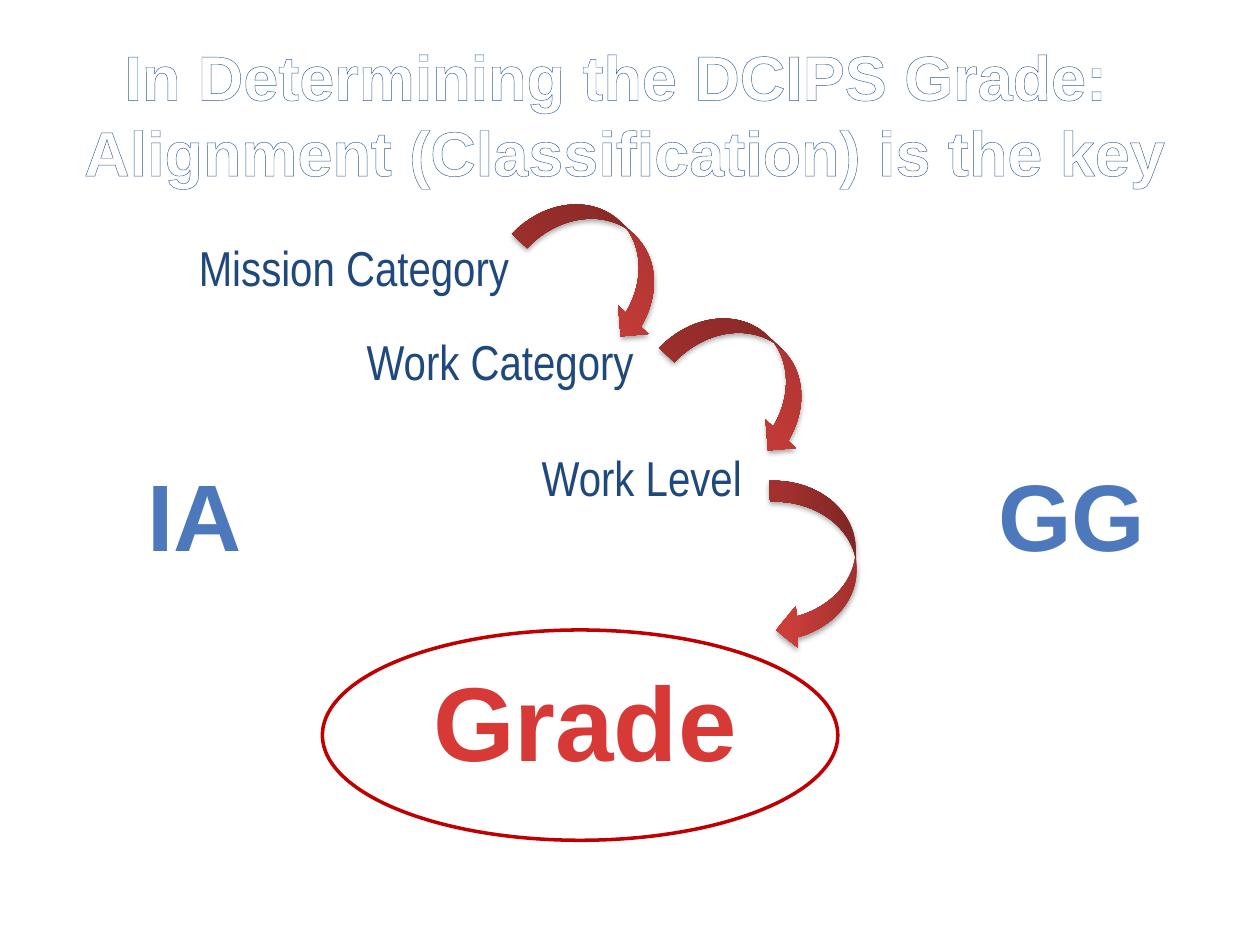
import pptx
import pptx.util
import pptx.oxml
import pptx.dml.color
import pptx.enum.shapes
import pptx.enum.text
from pptx.oxml.ns import nsdecls, qn

Cm, Pt = pptx.util.Cm, pptx.util.Pt
RGBColor = pptx.dml.color.RGBColor
Align = pptx.enum.text.PP_ALIGN
Shape = pptx.enum.shapes.MSO_SHAPE

WHITE = RGBColor(0xFF, 0xFF, 0xFF)
NAVY = RGBColor(0x1F, 0x49, 0x7D)
BLUE = RGBColor(0x4D, 0x79, 0xBC)
TITLE_OUTLINE = RGBColor(0x31, 0x5F, 0x97)
RED = RGBColor(0xD7, 0x3A, 0x36)
RING_RED = RGBColor(0xC0, 0x00, 0x00)
ARROW_STOPS = [(0, RGBColor(0x9C, 0x2F, 0x2D)), (0.8, RGBColor(0xCB, 0x3E, 0x3A))]

# Content: positions and sizes in centimetres
TITLE = "In Determining the DCIPS Grade:  Alignment (Classification) is the key"
TITLE_BOX = (1.07, 0.63, 23.06, 3.33)
STEPS = [  # text, box, wraps
    ("Mission Category", (3.76, 4.66, 7.19, 1.45), True),
    ("Work Category", (7.14, 6.55, 6.07, 1.45), True),
    ("Work Level", (10.67, 8.89, 4.72, 1.45), False),
]
ARROWS = [(10.43, 4.44, 223.3), (13.4, 6.74, 223.3), (14.71, 10.53, 267.3)]
ARROW_SIZE = (3.43, 1.68)
RING_BOX = (6.5, 12.7, 10.39, 4.24)
GRADE, GRADE_BOX = "Grade", (7.98, 13.11, 7.62, 2.82)
SCHEDULES, SCHEDULES_BOX = ("IA", "GG"), (2.73, 9.09, 20.85, 2.57)
SCHEDULES_TAB = 17.15


def lengths(values):
    return [Cm(value) for value in values]


def write(shape, text, size, font_name, color=None, bold=False, align=Align.LEFT, wrap=True):
    """Fill a text shape with one run; no color means an unfilled letter."""
    frame = shape.text_frame
    frame.word_wrap = wrap
    frame.auto_size = pptx.enum.text.MSO_AUTO_SIZE.SHAPE_TO_FIT_TEXT
    frame.vertical_anchor = pptx.enum.text.MSO_ANCHOR.TOP
    paragraph = frame.paragraphs[0]
    paragraph.alignment = align
    run = paragraph.add_run()
    run.text = text
    run.font.size, run.font.name, run.font.bold = Pt(size), font_name, bold
    if color is None:
        run.font.fill.background()
    else:
        run.font.color.rgb = color
    return paragraph, run


def outline_letters(run, color, width):
    run.font._element.insert(0, pptx.oxml.parse_xml(
        f'<a:ln {nsdecls("a")} w="{Pt(width)}"><a:solidFill>'
        f'<a:srgbClr val="{color}"/></a:solidFill></a:ln>'))


def add_arrow(shapes, left, top, rotation):
    arrow = shapes.add_shape(Shape.CURVED_UP_ARROW, *lengths((left, top) + ARROW_SIZE))
    arrow.rotation = rotation
    properties = arrow._element.spPr
    properties.find(qn("a:xfrm")).set("flipH", "1")
    arrow.fill.gradient()
    arrow.fill.gradient_angle = 90
    for stop, (position, color) in zip(arrow.fill.gradient_stops, ARROW_STOPS):
        stop.position, stop.color.rgb = position, color
    arrow.line.fill.background()
    arrow.shadow.inherit = False
    properties.find(qn("a:effectLst")).append(pptx.oxml.parse_xml(
        f'<a:outerShdw {nsdecls("a")} blurRad="{Pt(3.1)}" dist="{Pt(1.8)}" dir="5400000" '
        'rotWithShape="0"><a:srgbClr val="000000"><a:alpha val="35000"/>'
        '</a:srgbClr></a:outerShdw>'))


def main():
    presentation = pptx.Presentation()
    presentation.slide_width, presentation.slide_height = lengths((25.4, 19.05))
    slide = presentation.slides.add_slide(presentation.slide_layouts[5])
    shapes = slide.shapes

    # Title
    title = shapes.title
    title.left, title.top, title.width, title.height = lengths(TITLE_BOX)
    _, run = write(title, TITLE, 36, "Arial", WHITE, True, Align.CENTER)
    outline_letters(run, TITLE_OUTLINE, 2.48)

    # Ring around the grade
    ring = shapes.add_shape(Shape.OVAL, *lengths(RING_BOX))
    ring.shadow.inherit = False
    ring.fill.background()
    ring.line.color.rgb, ring.line.width = RING_RED, Pt(2)

    # Steps and the arrows that lead on from them
    for text, box, wrap in STEPS:
        write(shapes.add_textbox(*lengths(box)), text, 28, "Arial Narrow", NAVY, wrap=wrap)
    for arrow in ARROWS:
        add_arrow(shapes, *arrow)

    # Grade
    _, run = write(shapes.add_textbox(*lengths(GRADE_BOX)), GRADE, 60, "Arial",
                   bold=True, align=Align.CENTER)
    outline_letters(run, RED, 1.42)

    # Pay schedules on either side, set apart by a tab stop
    paragraph, _ = write(shapes.add_textbox(*lengths(SCHEDULES_BOX)),
                         "\t".join(SCHEDULES), 54, "Arial", BLUE, True)
    paragraph._p.get_or_add_pPr().append(pptx.oxml.parse_xml(
        f'<a:tabLst {nsdecls("a")}><a:tab pos="{Cm(SCHEDULES_TAB)}" algn="l"/></a:tabLst>'))

    presentation.save("out.pptx")


if __name__ == "__main__":
    main()
